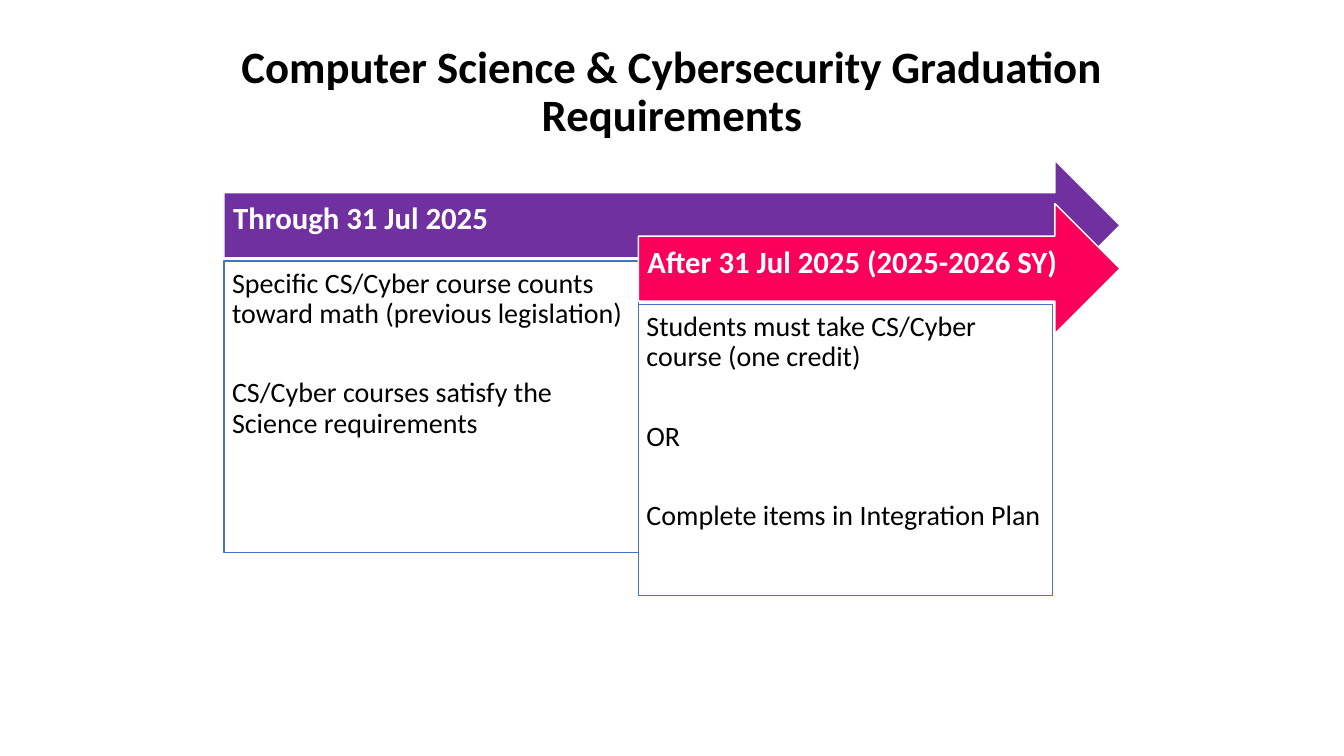
from dataclasses import dataclass

from pptx import Presentation
from pptx.dml.color import RGBColor
from pptx.enum.shapes import MSO_SHAPE
from pptx.enum.text import MSO_ANCHOR, PP_ALIGN
from pptx.shapes.autoshape import Shape
from pptx.slide import Slide
from pptx.util import Inches, Pt

WIDE, HIGH = Inches(13.333), Inches(7.5)
COLS, ROWS = 120, 75


@dataclass(frozen=True)
class Theme:
    font: str = "Calibri"
    ink: str = "000000"
    paper: str = "FFFFFF"
    edge: str = "4472C4"
    early: str = "7030A0"
    late: str = "FB005A"
    title: int = 32
    head: int = 22
    body: int = 20
    gap: int = 35
    line: float = 0.9


@dataclass(frozen=True)
class Box:
    """Left, top, width and height in grid columns and rows."""
    col: float
    row: float
    cols: float
    rows: float


@dataclass(frozen=True)
class Phase:
    head: str
    items: tuple[str, ...]
    fill: str


THEME = Theme()
TITLE = Box(15, 3, 90, 11.5)
START = Box(20, 15.9, 80, 12.9)  # first arrow
STEP_X, STEP_Y = 37, 4.3         # shift from one phase to the next
PANEL_Y, PANEL_H = 10, 28.9      # panel top below arrow top, panel height

PHASES = (
    Phase("Through 31 Jul 2025",
          ("Specific CS/Cyber course counts toward math (previous legislation)",
           "CS/Cyber courses satisfy the Science requirements"),
          THEME.early),
    Phase("After 31 Jul 2025 (2025-2026 SY)",
          ("Students must take CS/Cyber course (one credit)",
           "OR",
           "Complete items in Integration Plan"),
          THEME.late),
)


def place(box: Box) -> tuple[int, int, int, int]:
    """Turn grid units into slide lengths."""
    return (int(WIDE * box.col / COLS), int(HIGH * box.row / ROWS),
            int(WIDE * box.cols / COLS), int(HIGH * box.rows / ROWS))


def write(shape: Shape, *texts: str, size: int, color: str = THEME.ink,
          bold: bool = False, align: PP_ALIGN = PP_ALIGN.LEFT,
          anchor: MSO_ANCHOR = MSO_ANCHOR.TOP,
          inset: tuple[float, ...] = (0.08, 0.08, 0.08, 0.08)) -> None:
    frame = shape.text_frame
    frame.word_wrap = True
    frame.vertical_anchor = anchor
    (frame.margin_left, frame.margin_top,
     frame.margin_right, frame.margin_bottom) = map(Inches, inset)
    for i, text in enumerate(texts):
        para = frame.add_paragraph() if i else frame.paragraphs[0]
        para.alignment = align
        para.line_spacing = THEME.line
        if i:
            para.space_before = Pt(THEME.gap)
        run = para.add_run()
        run.text = text
        run.font.name = THEME.font
        run.font.size = Pt(size)
        run.font.bold = bold
        run.font.color.rgb = RGBColor.from_string(color)


def draw(slide: Slide, kind: MSO_SHAPE, box: Box, fill: str, line: str) -> Shape:
    shape = slide.shapes.add_shape(kind, *place(box))
    shape.shadow.inherit = False
    shape.fill.solid()
    shape.fill.fore_color.rgb = RGBColor.from_string(fill)
    shape.line.color.rgb = RGBColor.from_string(line)
    shape.line.width = Pt(1)
    return shape


def add_phase(slide: Slide, phase: Phase, index: int) -> None:
    """Draw an arrow and its panel; all arrows end at the same tip."""
    left = START.col + index * STEP_X
    top = START.row + index * STEP_Y
    width = START.cols - index * STEP_X
    arrow = draw(slide, MSO_SHAPE.RIGHT_ARROW,
                 Box(left, top, width, START.rows), phase.fill, THEME.paper)
    write(arrow, phase.head, size=THEME.head, color=THEME.paper, bold=True,
          anchor=MSO_ANCHOR.MIDDLE, inset=(0.09, 0.1, 0.25, 0.21))
    panel = draw(slide, MSO_SHAPE.RECTANGLE,
                 Box(left, top + PANEL_Y, STEP_X, PANEL_H),
                 THEME.paper, THEME.edge)
    write(panel, *phase.items, size=THEME.body)


def main() -> None:
    deck = Presentation()
    deck.slide_width, deck.slide_height = WIDE, HIGH
    slide = deck.slides.add_slide(deck.slide_layouts[6])
    for index, phase in enumerate(PHASES):
        add_phase(slide, phase, index)
    title = slide.shapes.add_textbox(*place(TITLE))
    write(title, "Computer Science & Cybersecurity Graduation Requirements",
          size=THEME.title, bold=True, align=PP_ALIGN.CENTER,
          anchor=MSO_ANCHOR.BOTTOM, inset=(0.1, 0.05, 0.1, 0.05))
    deck.save("out.pptx")


if __name__ == "__main__":
    main()
